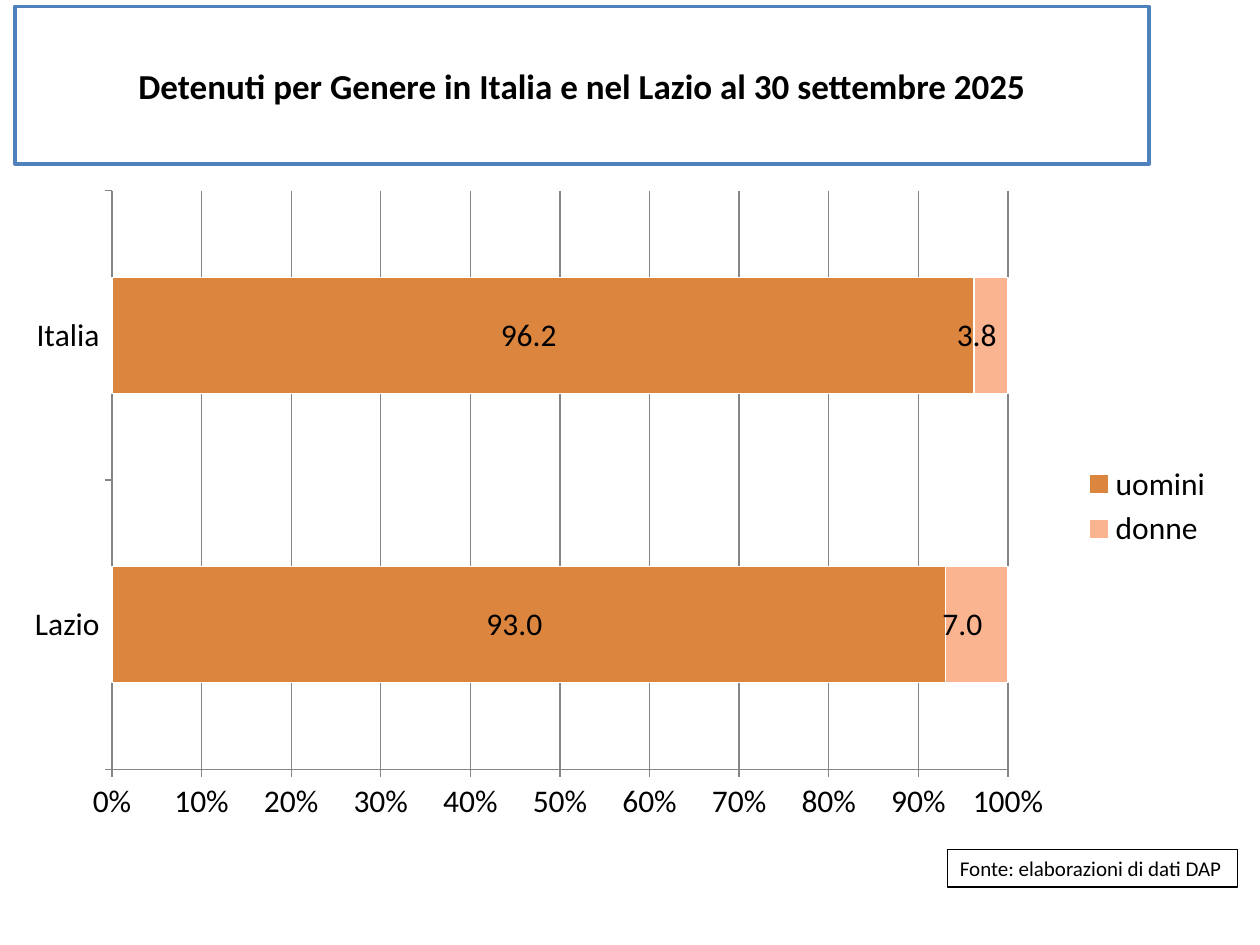
"""Build a slide on prisoners by gender in Italy and Lazio."""
from typing import NamedTuple

from lxml.etree import SubElement
from pptx import Presentation
from pptx.chart.data import CategoryChartData as Data
from pptx.dml.color import RGBColor as Rgb
from pptx.enum.chart import XL_CHART_TYPE as Kind
from pptx.enum.chart import XL_LABEL_POSITION as Spot
from pptx.enum.chart import XL_LEGEND_POSITION as Side
from pptx.enum.chart import XL_TICK_MARK as Tick
from pptx.enum.text import MSO_ANCHOR as Anchor
from pptx.enum.text import MSO_AUTO_SIZE as Fit
from pptx.enum.text import PP_ALIGN as Align
from pptx.oxml.ns import qn
from pptx.util import Inches, Pt

HUES = {"ink": "000000", "paper": "FFFFFF", "frame": "4F81BD",
        "grid": "868686", "men": "DC853E", "women": "FAB490"}
FACE = "Calibri"
FORM = r"#,##0.0\ _€_-"


class Box(NamedTuple):
    """Place and size in inches."""
    left: float
    top: float
    width: float
    height: float


class Group(NamedTuple):
    """One series of the chart."""
    name: str
    hue: str
    rates: tuple[float, ...]


GROUPS = [Group("uomini", "men", (93.0, 96.2)),
          Group("donne", "women", (7.0, 3.8))]


def place(shape, box: Box) -> None:
    """Move and size a shape."""
    shape.left, shape.top, shape.width, shape.height = map(Inches, box)


def style(font, size: float, bold: bool = False) -> None:
    """Set face, size, weight and colour of a font."""
    font.name, font.size, font.bold = FACE, Pt(size), bold
    font.color.rgb = Rgb.from_string(HUES["ink"])


def fill(part, hue: str) -> None:
    """Fill a part with one colour."""
    part.fill.solid()
    part.fill.fore_color.rgb = Rgb.from_string(HUES[hue])


def edge(line, hue: str, width: float) -> None:
    """Set colour and width of a line."""
    line.color.rgb = Rgb.from_string(HUES[hue])
    line.width = Pt(width)


def label(shape, text: str, size: float, hue: str, width: float,
          bold: bool = False) -> None:
    """Write one line of text in a framed white box."""
    fill(shape, "paper")
    edge(shape.line, hue, width)
    shape.text_frame.text = text
    style(shape.text_frame.paragraphs[0].font, size, bold)


def fix_plot(chart, area: Box) -> None:
    """Pin the inner plot area, given in fractions of the chart."""
    plot = chart.plots[0]._element.getparent()
    for old in plot.findall(qn("c:layout")):
        plot.remove(old)
    layout = SubElement(plot, qn("c:layout"))
    plot.insert(0, layout)
    manual = SubElement(layout, qn("c:manualLayout"))
    pairs = [("layoutTarget", "inner"), ("xMode", "edge"), ("yMode", "edge"),
             *zip("xywh", area)]
    for tag, val in pairs:
        SubElement(manual, qn(f"c:{tag}")).set("val", str(val))


def draw_chart(slide, box: Box) -> None:
    """Draw the stacked bars of men and women."""
    data = Data(number_format="0.0")
    data.categories = ["Lazio", "Italia"]
    for group in GROUPS:
        data.add_series(group.name, group.rates)
    chart = slide.shapes.add_chart(
        Kind.BAR_STACKED_100, *map(Inches, box), data).chart
    style(chart.font, 18)
    chart.has_title = False
    chart.has_legend = True
    chart.legend.position = Side.RIGHT
    chart.legend.include_in_layout = False
    plot = chart.plots[0]
    plot.gap_width, plot.overlap = 150, 100
    plot.vary_by_categories = False
    for group, bar in zip(GROUPS, plot.series):
        fill(bar.format, group.hue)
        edge(bar.format.line, "paper", 0.75)
        tags = bar.data_labels
        tags.show_value = True
        tags.position = Spot.CENTER
        tags.number_format, tags.number_format_is_linked = FORM, False
        style(tags.font, 18)
    for axis in (chart.category_axis, chart.value_axis):
        axis.major_tick_mark = Tick.OUTSIDE
        axis.minor_tick_mark = Tick.NONE
        edge(axis.format.line, "grid", 0.75)
    scale = chart.value_axis
    scale.minimum_scale, scale.maximum_scale, scale.major_unit = 0, 1, 0.1
    scale.has_major_gridlines = True
    edge(scale.major_gridlines.format.line, "grid", 0.75)
    scale.tick_labels.number_format = "0%"
    scale.tick_labels.number_format_is_linked = False
    fix_plot(chart, Box(0.08, 0.02, 0.74, 0.88))


def main() -> None:
    """Build and save the slide."""
    deck = Presentation()
    deck.slide_width, deck.slide_height = Inches(10), Inches(7.5)
    slide = deck.slides.add_slide(deck.slide_layouts[5])
    title = slide.shapes.title
    place(title, Box(0.12, 0.05, 9, 1.25))
    label(title, "Detenuti per Genere in Italia e nel Lazio al 30 settembre 2025",
          20, "frame", 2, True)
    title.text_frame.vertical_anchor = Anchor.MIDDLE
    title.text_frame.paragraphs[0].alignment = Align.CENTER
    note = slide.shapes.add_textbox(*map(Inches, Box(7.52, 6.74, 2.3, 0.3)))
    label(note, "Fonte: elaborazioni di dati DAP", 12, "ink", 0.75)
    note.text_frame.word_wrap = False
    note.text_frame.auto_size = Fit.SHAPE_TO_FIT_TEXT
    draw_chart(slide, Box(0.12, 1.41, 9.61, 5.22))
    deck.save("out.pptx")


if __name__ == "__main__":
    main()
